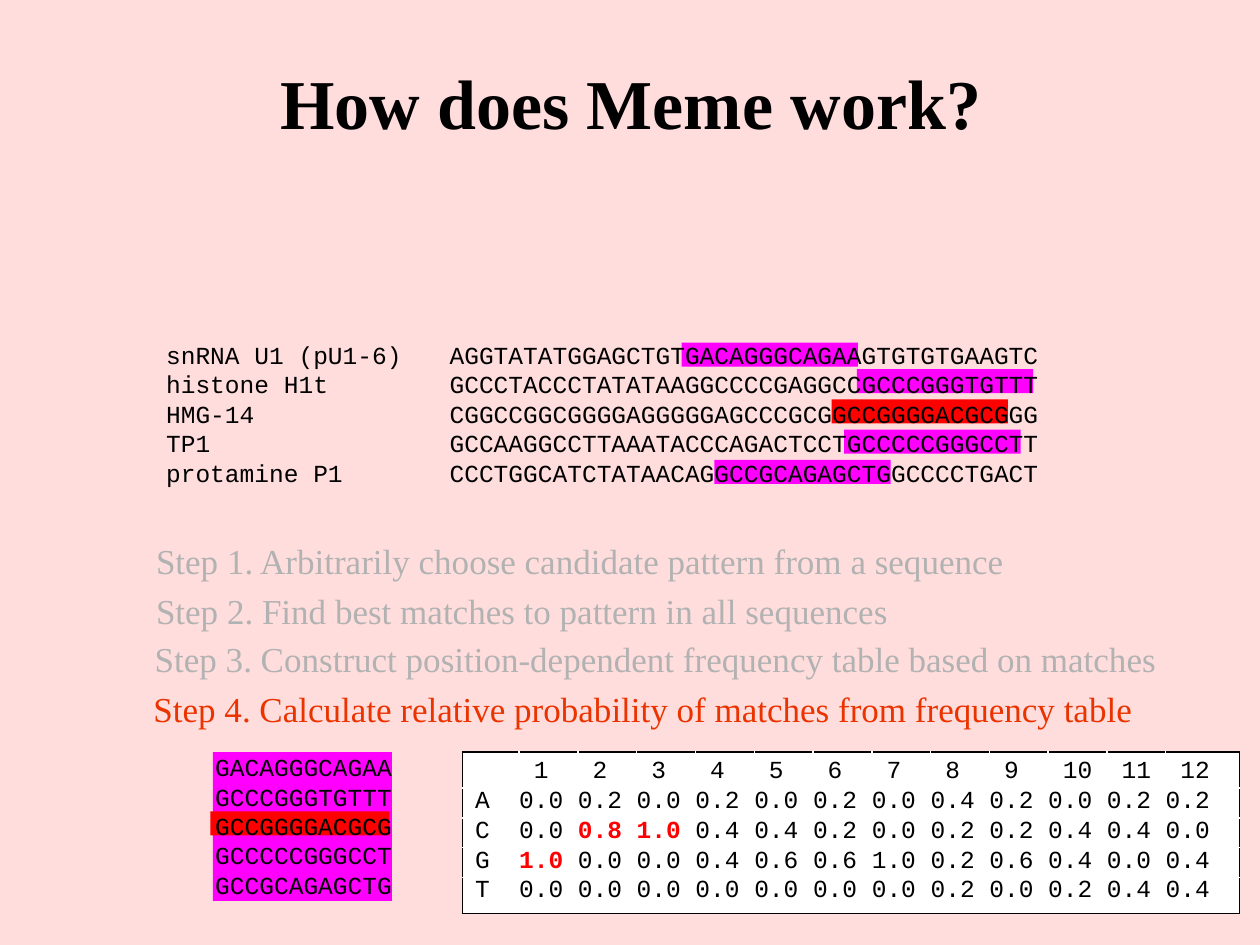
import dataclasses

import pptx
import pptx.dml.color
import pptx.enum.shapes
import pptx.enum.text
import pptx.oxml
import pptx.oxml.ns
import pptx.util

Inches = pptx.util.Inches
Pt = pptx.util.Pt
RGB = pptx.dml.color.RGBColor.from_string
ANCHOR = pptx.enum.text.MSO_ANCHOR
ALIGN = pptx.enum.text.PP_ALIGN


@dataclasses.dataclass(frozen=True)
class Theme:
    """Colours, fonts and type sizes of the slide."""
    background: str = "FFDDDD"
    ink: str = "000000"
    faded: str = "B2B2B2"
    active: str = "EB3300"
    match: str = "FF00FF"
    seed: str = "FF0000"
    paper: str = "FFFFFF"
    serif: str = "Times New Roman"
    mono: str = "Courier New"
    title_size: int = 40
    step_size: int = 20
    code_size: int = 14


THEME = Theme()
CHARACTER = 0.1167
MOTIF_WIDTH, MARK_HEIGHT = 1.4, 0.19
SEQUENCES = [
    ("snRNA U1 (pU1-6)", "AGGTATATGGAGCTGTGACAGGGCAGAAGTGTGTGAAGTC"),
    ("histone H1t", "GCCCTACCCTATATAAGGCCCCGAGGCCGCCCGGGTGTTT"),
    ("HMG-14", "CGGCCGGCGGGGAGGGGGAGCCCGCGGCCGGGGACGCGGG"),
    ("TP1", "GCCAAGGCCTTAAATACCCAGACTCCTGCCCCCGGGCCTT"),
    ("protamine P1", "CCCTGGCATCTATAACAGGCCGCAGAGCTGGCCCCTGACT"),
]
MARKS = [(4.19, 0.07), (5.58, 0.28), (5.38, 0.52), (5.48, 0.76), (4.45, 1.0)]
SEED_ROW = 2
MOTIFS = ["GACAGGGCAGAA", "GCCCGGGTGTTT", "GCCGGGGACGCG", "GCCCCCGGGCCT", "GCCGCAGAGCTG"]
STEPS = [
    (1.14, 4.23, "Step 1. Arbitrarily choose candidate pattern from a sequence"),
    (1.14, 4.63, "Step 2. Find best matches to pattern in all sequences"),
    (1.13, 5.01, "Step 3. Construct position-dependent frequency table based on matches"),
    (1.12, 5.41, "Step 4. Calculate relative probability of matches from frequency table"),
]
FREQUENCIES = {
    "A": "0.0 0.2 0.0 0.2 0.0 0.2 0.0 0.4 0.2 0.0 0.2 0.2",
    "C": "0.0 0.8 1.0 0.4 0.4 0.2 0.0 0.2 0.2 0.4 0.4 0.0",
    "G": "1.0 0.0 0.0 0.4 0.6 0.6 1.0 0.2 0.6 0.4 0.0 0.4",
    "T": "0.0 0.0 0.0 0.0 0.0 0.0 0.0 0.2 0.0 0.2 0.4 0.4",
}
PEAKS = {("C", 2), ("C", 3), ("G", 1)}


def assign(target, values):
    """Set each named attribute of the target."""
    for name, value in values.items():
        setattr(target, name, value)


def style(frame, font, size, color, bold=False):
    """Format every paragraph of a text frame."""
    for paragraph in frame.paragraphs:
        for run in paragraph.runs:
            assign(run.font, {"name": font, "size": Pt(size), "bold": bold})
            run.font.color.rgb = RGB(color)


def add_label(slide, box, text, font, size, color):
    """Add a wrapped text box and return its frame."""
    frame = slide.shapes.add_textbox(*map(Inches, box)).text_frame
    assign(frame, {"word_wrap": True, "text": text})
    style(frame, font, size, color)
    return frame


def add_mark(slide, box, color):
    """Add a flat highlight rectangle."""
    kind = pptx.enum.shapes.MSO_SHAPE.RECTANGLE
    mark = slide.shapes.add_shape(kind, *map(Inches, box))
    mark.shadow.inherit = False
    mark.fill.solid()
    mark.fill.fore_color.rgb = RGB(color)
    mark.line.fill.background()


def add_title(slide, box, text):
    """Place and format the title placeholder."""
    title = slide.shapes.title
    assign(title, dict(zip(("left", "top", "width", "height"), map(Inches, box))))
    assign(title.text_frame, {
        "text": text, "word_wrap": True, "vertical_anchor": ANCHOR.TOP,
        "auto_size": pptx.enum.text.MSO_AUTO_SIZE.NONE})
    title.text_frame.paragraphs[0].alignment = ALIGN.CENTER
    style(title.text_frame, THEME.serif, THEME.title_size, THEME.ink, True)


def add_sequences(slide, box):
    """Add the named sequences with their matches highlighted."""
    left, top = box[:2]
    for row, (across, down) in enumerate(MARKS):
        color = THEME.seed if row == SEED_ROW else THEME.match
        add_mark(slide, (left + across, top + down, MOTIF_WIDTH, MARK_HEIGHT), color)
    text = "\n".join(f"{name}\t{bases}" for name, bases in SEQUENCES)
    frame = add_label(slide, box, text, THEME.mono, THEME.code_size, THEME.ink)
    for paragraph in frame.paragraphs:
        stops = pptx.oxml.parse_xml(
            f'<a:tabLst {pptx.oxml.ns.nsdecls("a")}>'
            f'<a:tab pos="{Inches(2.25)}" algn="l"/></a:tabLst>')
        paragraph._p.get_or_add_pPr().append(stops)


def add_steps(slide, width, height):
    """Add the steps, the last one active."""
    for left, top, text in STEPS:
        color = THEME.active if text == STEPS[-1][2] else THEME.faded
        add_label(slide, (left, top, width, height), text,
                  THEME.serif, THEME.step_size, color)


def add_motifs(slide, box):
    """Add the stacked motifs on their coloured block."""
    left, top = box[:2]
    add_mark(slide, (left + 0.08, top + 0.05, 1.42, 1.18), THEME.match)
    add_mark(slide, (left + 0.06, top + 0.52, 1.42, MARK_HEIGHT), THEME.seed)
    add_label(slide, box, "\v".join(MOTIFS), THEME.mono, THEME.code_size, THEME.ink)


def add_border(cell, side):
    """Draw a thin line on one side of a cell."""
    cell._tc.get_or_add_tcPr().append(pptx.oxml.parse_xml(
        f'<a:{side} {pptx.oxml.ns.nsdecls("a")} w="{Pt(1)}"><a:solidFill>'
        f'<a:srgbClr val="{THEME.ink}"/></a:solidFill></a:{side}>'))


def add_frequencies(slide, box):
    """Add the position-dependent frequency table."""
    left, top, width, height = box
    positions = [""] + [str(number) for number in range(1, 13)]
    rows = [positions] + [[base, *line.split()] for base, line in FREQUENCIES.items()]
    last_row, last_column = len(rows) - 1, len(positions) - 1
    table = slide.shapes.add_table(
        len(rows), len(positions), *map(Inches, box)).table
    assign(table, {"first_row": False, "horz_banding": False})
    padding = 0.05
    line_height = (height - 2 * padding) / len(rows)
    label_width, value_width = 0.45, 4 * CHARACTER
    end_width = width - label_width - (last_column - 1) * value_width
    widths = [label_width] + [value_width] * (last_column - 1) + [end_width]
    for column, column_width in zip(table.columns, widths):
        column.width = Inches(column_width)
    for r, values in enumerate(rows):
        above, below = padding * (r == 0), padding * (r == last_row)
        table.rows[r].height = Inches(line_height + above + below)
        for c, value in enumerate(values):
            cell = table.cell(r, c)
            indent = 0.1 if c == 0 else CHARACTER * (r == 0)
            assign(cell, {
                "text": value, "margin_left": Inches(indent), "margin_right": 0,
                "margin_top": Inches(above), "margin_bottom": Inches(below),
                "vertical_anchor": ANCHOR.TOP})
            edges = {"lnL": c == 0, "lnR": c == last_column,
                     "lnT": r == 0, "lnB": r == last_row}
            for side, outer in edges.items():
                if outer:
                    add_border(cell, side)
            cell.fill.solid()
            cell.fill.fore_color.rgb = RGB(THEME.paper)
            peak = (values[0], c) in PEAKS
            style(cell.text_frame, THEME.mono, THEME.code_size,
                  THEME.seed if peak else THEME.ink, peak)
            if not value:
                cell.text_frame.paragraphs[0].font.size = Pt(THEME.code_size)


def main():
    """Build and save the slide."""
    deck = pptx.Presentation()
    assign(deck, {"slide_width": Inches(10), "slide_height": Inches(7.5)})
    slide = deck.slides.add_slide(deck.slide_layouts.get_by_name("Title Only"))
    slide.background.fill.solid()
    slide.background.fill.fore_color.rgb = RGB(THEME.background)
    add_title(slide, (0.92, 0.42, 8.17, 0.77), "How does Meme work?")
    add_sequences(slide, (1.22, 2.65, 7.18, 1.26))
    add_steps(slide, 8.43, 0.43)
    add_motifs(slide, (1.61, 5.92, 3.25, 1.26))
    add_frequencies(slide, (3.67, 5.97, 6.17, 1.28))
    deck.save("out.pptx")


if __name__ == "__main__":
    main()
